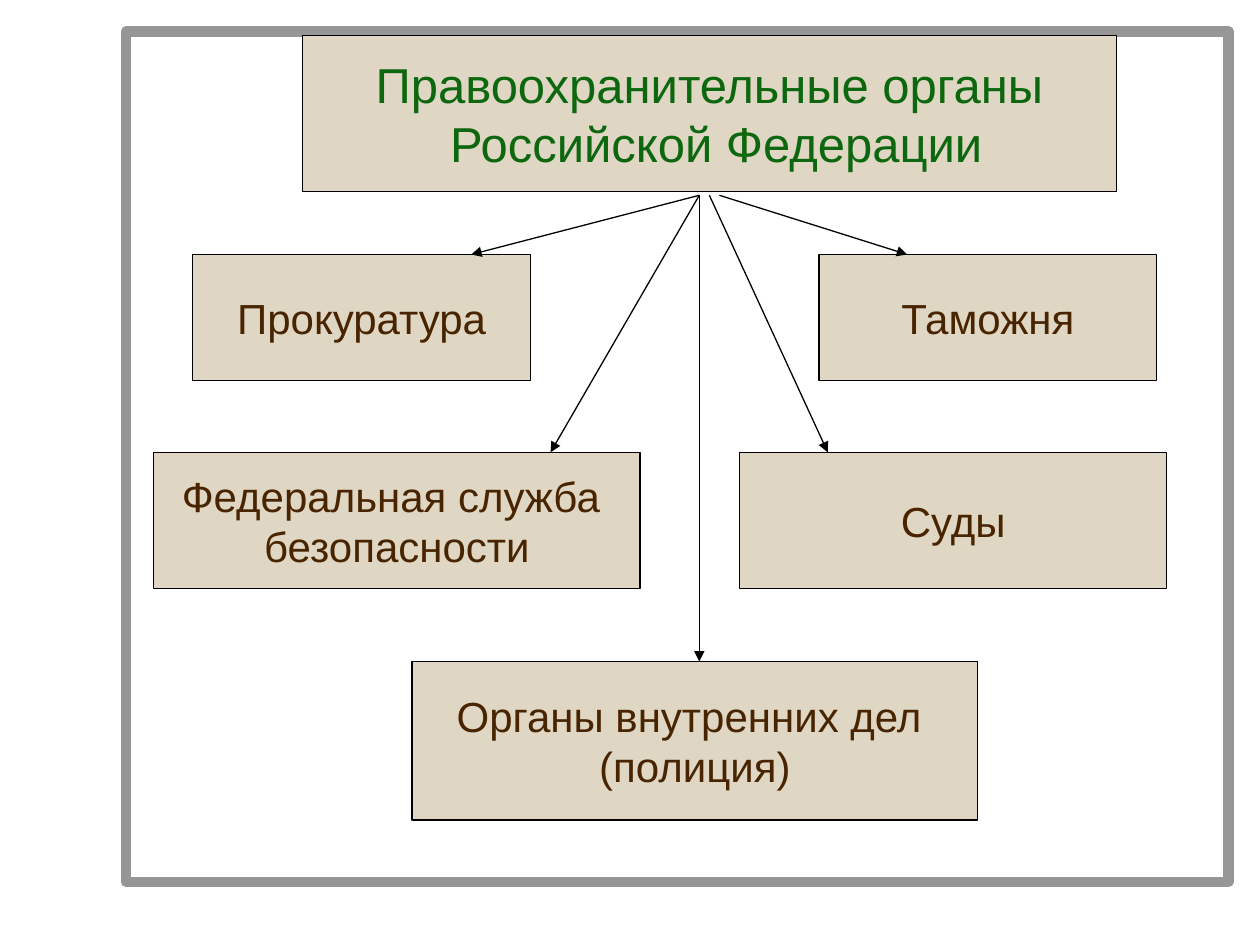
from lxml import etree
from pptx import Presentation
from pptx import util as u
from pptx.dml.color import RGBColor
from pptx.enum import shapes, text
from pptx.oxml.ns import qn

BEIGE, BLACK, WHITE, GREY = "DFD6C3", "000000", "FFFFFF", "969696"
GREEN, BROWN = "0C670E", "482400"

# Tops of the rows of boxes, and the level where the arrows start
TITLE_ROW, UPPER_ROW, MIDDLE_ROW, LOWER_ROW = 0.28, 2.02, 3.59, 5.25
ARROW_START = 1.55

# Left, top, width, height, lines of text
BODIES = [
    (1.53, UPPER_ROW, 2.68, 1.0, ["Прокуратура"]),
    (6.5, UPPER_ROW, 2.68, 1.0, ["Таможня"]),
    (1.22, MIDDLE_ROW, 3.86, 1.08, ["Федеральная служба ", "безопасности"]),
    (5.87, MIDDLE_ROW, 3.39, 1.08, ["Суды"]),
    (3.27, LOWER_ROW, 4.49, 1.26, ["Органы внутренних дел ", "(полиция)"]),
]

# Start x, end x, row reached
ARROWS = [
    (5.55, 3.74, UPPER_ROW),
    (5.71, 7.2, UPPER_ROW),
    (5.63, 6.57, MIDDLE_ROW),
    (5.55, 4.37, MIDDLE_ROW),
    (5.55, 5.55, LOWER_ROW),
]


def colour(value):
    return RGBColor.from_string(value)


def paint(shape, fill, line, width):
    shape.fill.solid()
    shape.fill.fore_color.rgb = colour(fill)
    shape.line.color.rgb = colour(line)
    shape.line.width = u.Pt(width)


def write(shape, lines, size=24, color=BROWN, font="Arial"):
    frame = shape.text_frame
    frame.auto_size = text.MSO_AUTO_SIZE.NONE
    frame.word_wrap = False
    frame.vertical_anchor = text.MSO_ANCHOR.MIDDLE
    for i, line in enumerate(lines):
        paragraph = frame.paragraphs[0] if i == 0 else frame.add_paragraph()
        paragraph.alignment = text.PP_ALIGN.CENTER
        run = paragraph.add_run()
        run.text = line
        run.font.name = font
        run.font.size = u.Pt(size)
        run.font.color.rgb = colour(color)


def add_rectangle(slide, left, top, width, height, fill=BEIGE, line=BLACK, weight=0.75):
    box = slide.shapes.add_shape(
        shapes.MSO_SHAPE.RECTANGLE,
        u.Inches(left), u.Inches(top), u.Inches(width), u.Inches(height))
    box.shadow.inherit = False
    paint(box, fill, line, weight)
    return box


def add_title(slide, left, top, width, height, lines):
    title = slide.shapes.title
    title.left, title.top = u.Inches(left), u.Inches(top)
    title.width, title.height = u.Inches(width), u.Inches(height)
    paint(title, BEIGE, BLACK, 0.75)
    write(title, lines, size=28, color=GREEN)


def add_arrow(slide, start_x, end_x, end_y):
    arrow = slide.shapes.add_connector(
        shapes.MSO_CONNECTOR.STRAIGHT,
        u.Inches(start_x), u.Inches(ARROW_START), u.Inches(end_x), u.Inches(end_y))
    arrow.line.color.rgb = colour(BLACK)
    arrow.line.width = u.Pt(0.75)
    etree.SubElement(arrow.line._get_or_add_ln(), qn("a:tailEnd"), type="triangle")
    etree.SubElement(arrow._element.spPr, qn("a:effectLst"))


def main():
    deck = Presentation()
    deck.slide_width, deck.slide_height = u.Inches(10), u.Inches(7.5)
    slide = deck.slides.add_slide(deck.slide_layouts[5])

    # Grey frame, sent behind the title
    frame = add_rectangle(slide, 1, 0.25, 8.75, 6.75, fill=WHITE, line=GREY, weight=6)
    slide.shapes._spTree.insert(2, frame._element)

    # Heading and the bodies below it
    add_title(slide, 2.4, TITLE_ROW, 6.46, 1.24,
              ["Правоохранительные органы", " Российской Федерации"])
    for left, top, width, height, lines in BODIES:
        write(add_rectangle(slide, left, top, width, height), lines)

    # Arrows from the heading to each body
    for arrow in ARROWS:
        add_arrow(slide, *arrow)

    deck.save("out.pptx")


if __name__ == "__main__":
    main()
